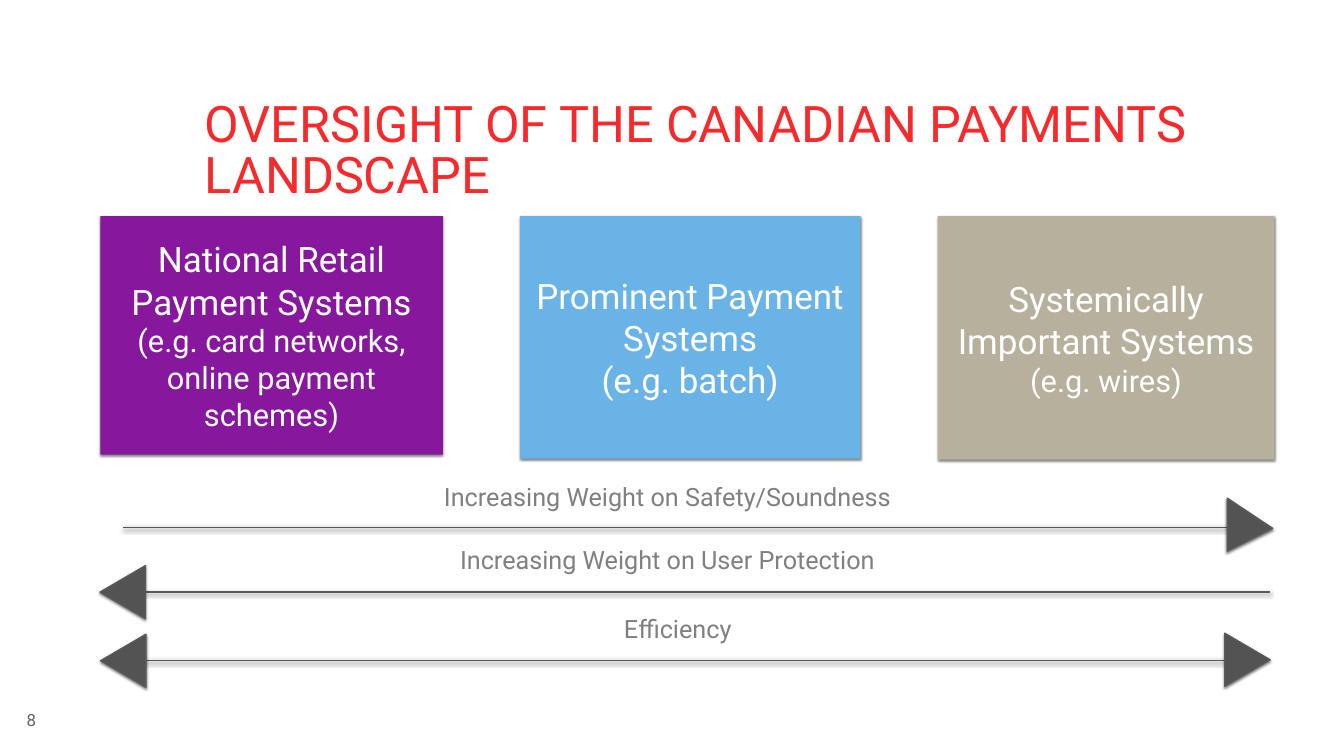
from lxml.etree import SubElement
from pptx import Presentation
from pptx.dml.color import RGBColor
from pptx.enum.shapes import MSO_CONNECTOR, MSO_SHAPE
from pptx.enum.text import MSO_ANCHOR, PP_ALIGN
from pptx.oxml.ns import qn
from pptx.util import Inches, Pt

RED = RGBColor(0xF7, 0x29, 0x2B)
PURPLE = RGBColor(0x87, 0x18, 0x9D)
BLUE = RGBColor(0x69, 0xB3, 0xE7)
SAND = RGBColor(0xB7, 0xB0, 0x9C)
WHITE = RGBColor(0xFF, 0xFF, 0xFF)
LINE_GREY = RGBColor(0x59, 0x59, 0x59)
HEAD_GREY = RGBColor(0x53, 0x53, 0x53)
LABEL_GREY = RGBColor(0x80, 0x80, 0x80)
NUMBER_GREY = RGBColor(0x5D, 0x62, 0x67)

HEAD_WIDTH, HEAD_HEIGHT = 3.94, 6


class SlideBuilder:
    """Draws on one slide; all lengths are percentages of its width and height."""

    font_name = "Roboto"

    def __init__(self, deck):
        self.slide = deck.slides.add_slide(deck.slide_layouts[6])
        self.shapes = self.slide.shapes
        self.column = deck.slide_width / 100
        self.row = deck.slide_height / 100

    def place(self, x, y, width, height):
        return (round(x * self.column), round(y * self.row),
                round(width * self.column), round(height * self.row))

    def style(self, font, size, color):
        font.name, font.size, font.color.rgb = self.font_name, Pt(size), color

    def frame(self, shape, inset, anchor=MSO_ANCHOR.MIDDLE, wrap=True):
        frame = shape.text_frame
        frame.word_wrap, frame.vertical_anchor = wrap, anchor
        frame.margin_left = frame.margin_right = Inches(inset)
        frame.margin_top = frame.margin_bottom = Inches(inset)
        return frame

    def cast_shadow(self, shape):
        """Adds a soft shadow straight below; call once the outline is set."""
        effects = SubElement(shape._element.spPr, qn("a:effectLst"))
        shadow = SubElement(effects, qn("a:outerShdw"), blurRad=str(Pt(4)),
                            dist=str(Pt(2)), dir="5400000", rotWithShape="0")
        black = SubElement(shadow, qn("a:srgbClr"), val="000000")
        SubElement(black, qn("a:alpha"), val="50000")

    def text(self, words, area, size, color, inset=0.08, align=PP_ALIGN.LEFT,
             anchor=MSO_ANCHOR.MIDDLE, wrap=True, leading=None):
        box = self.shapes.add_textbox(*self.place(*area))
        paragraph = self.frame(box, inset, anchor, wrap).paragraphs[0]
        paragraph.text, paragraph.alignment = words, align
        if leading:
            paragraph.line_spacing = Pt(leading)
        self.style(paragraph.font, size, color)

    def category(self, area, fill, paragraphs):
        """Draws a filled box; each paragraph is a list of (words, size) runs."""
        box = self.shapes.add_shape(MSO_SHAPE.RECTANGLE, *self.place(*area))
        box.fill.solid()
        box.fill.fore_color.rgb = fill
        box.line.fill.background()
        self.cast_shadow(box)
        frame = self.frame(box, 0.08)
        for index, runs in enumerate(paragraphs):
            paragraph = frame.add_paragraph() if index else frame.paragraphs[0]
            paragraph.alignment = PP_ALIGN.CENTER
            for words, size in runs:
                run = paragraph.add_run()
                run.text = words
                self.style(run.font, size, WHITE)

    def arrow(self, start, end, y, ends=("tailEnd",)):
        x1, y1, x2, y2 = self.place(start, y, end, y)
        arrow = self.shapes.add_connector(MSO_CONNECTOR.STRAIGHT, x1, y1, x2, y2)
        arrow.line.color.rgb, arrow.line.width = LINE_GREY, Pt(2)
        outline = arrow._element.spPr.find(qn("a:ln"))
        for name in ends:
            SubElement(outline, qn(f"a:{name}"), type="arrow")
        self.cast_shadow(arrow)

    def arrowhead(self, center_x, center_y, rotation, apex=0.5):
        area = (center_x - HEAD_WIDTH / 2, center_y - HEAD_HEIGHT / 2,
                HEAD_WIDTH, HEAD_HEIGHT)
        head = self.shapes.add_shape(MSO_SHAPE.ISOSCELES_TRIANGLE, *self.place(*area))
        head.adjustments[0] = apex
        head.rotation = rotation
        head._element.spPr.find(qn("a:xfrm")).set("flipH", "1")
        head.fill.solid()
        head.fill.fore_color.rgb = HEAD_GREY
        head.line.color.rgb, head.line.width = LINE_GREY, Pt(2)
        self.cast_shadow(head)


def main():
    deck = Presentation()
    deck.slide_width, deck.slide_height = Inches(26.67), Inches(15)
    page = SlideBuilder(deck)

    page.text("OVERSIGHT OF THE CANADIAN PAYMENTS LANDSCAPE",
              (15.04, 13.6, 78.81, 13.2), 72, RED, inset=0.05, leading=72)

    categories = [
        (69.78, 25.05, 32.2, SAND,
         [[("Systemically Important Systems ", 50), ("(e.g. wires)", 44)]]),
        (38.7, 25.31, 32.07, BLUE,
         [[("Prominent Payment Systems", 50)], [("(e.g. batch)", 50)]]),
        (7.46, 25.5, 31.53, PURPLE,
         [[("National Retail Payment Systems", 50)],
          [("(e.g. card networks, online payment schemes)", 44)]]),
    ]
    for left, width, height, fill, paragraphs in categories:
        page.category((left, 28.6, width, height), fill, paragraphs)

    page.arrow(94.49, 9.34, 78.3)
    page.arrow(9.15, 93.03, 69.8)
    page.arrow(9.15, 91.75, 87.4, ends=("headEnd", "tailEnd"))

    labels = [
        ("Increasing Weight on Safety/Soundness", 49.66, 63.13, 33.93),
        ("Increasing Weight on User Protection", 49.66, 71.53, 31.5),
        ("Efficiency", 50.43, 80.6, 8.7),
    ]
    for words, center, top, width in labels:
        page.text(words, (center - width / 2, top, width, 5.07), 36, LABEL_GREY,
                  align=PP_ALIGN.CENTER, wrap=False)

    page.arrowhead(92.82, 87.27, 90)
    page.arrowhead(93.01, 69.4, 90, apex=0.43)
    page.arrowhead(9.13, 78.33, 270)
    page.arrowhead(9.17, 87.4, 270)

    page.text("8", (1.99, 93.87, 13.05, 2.67), 24, NUMBER_GREY, inset=0,
              anchor=MSO_ANCHOR.TOP)
    deck.save("out.pptx")


if __name__ == "__main__":
    main()
